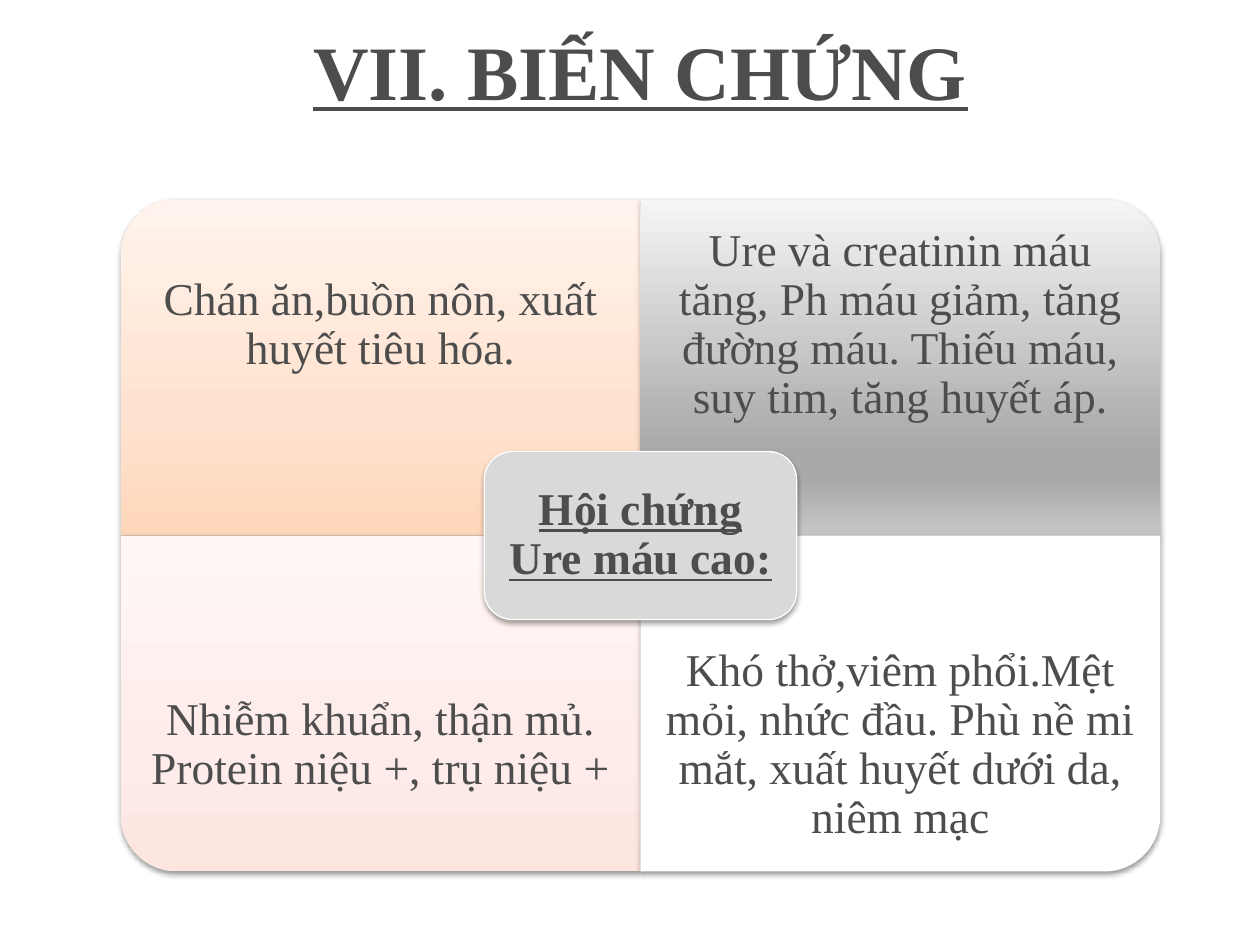
from dataclasses import dataclass

from lxml import etree
from pptx import Presentation
from pptx.dml.color import RGBColor
from pptx.enum.shapes import MSO_SHAPE
from pptx.enum.text import MSO_ANCHOR, PP_ALIGN
from pptx.oxml.ns import qn
from pptx.shapes.autoshape import Shape
from pptx.shapes.shapetree import SlideShapes
from pptx.util import Pt

ONE_ROUND = MSO_SHAPE.ROUND_1_RECTANGLE
ROUNDED = MSO_SHAPE.ROUNDED_RECTANGLE
MIDDLE = MSO_ANCHOR.MIDDLE
CENTER = PP_ALIGN.CENTER

FONT = "Times New Roman"
INK = RGBColor(0x4D, 0x4D, 0x4D)
WHITE = RGBColor(0xFF, 0xFF, 0xFF)
BLACK = RGBColor(0x00, 0x00, 0x00)
HUB_GRAY = RGBColor(0xD9, 0xD9, 0xD9)
PEACH = RGBColor(0xFF, 0xD7, 0xBA)
PEACH_LIGHT = RGBColor(0xFF, 0xE2, 0xCF)
PEACH_PALE = RGBColor(0xFF, 0xF4, 0xED)
SILVER_PALE = RGBColor(0xF5, 0xF5, 0xF5)
SILVER_DARK = RGBColor(0xA9, 0xA9, 0xA9)
SILVER = RGBColor(0xC6, 0xC6, 0xC6)
ROSE = RGBColor(0xFD, 0xE5, 0xE0)
ROSE_LIGHT = RGBColor(0xFD, 0xEC, 0xE9)
ROSE_PALE = RGBColor(0xFF, 0xF7, 0xF5)

CENTER_X, CENTER_Y = 366, 306
TILE_WIDTH, TILE_HEIGHT = 297, 192
TILE_TEXT_HEIGHT = 144
HUB_WIDTH, HUB_HEIGHT = 178.5, 96
HUB_PADDING = 5

Stops = tuple[tuple[int, RGBColor], ...]


@dataclass(frozen=True)
class Tile:
    text: str
    column: int
    row: int
    rotation: int
    stops: Stops
    angle: int = 90


TILES = (
    Tile("Chán ăn,buồn nôn, xuất huyết tiêu hóa.", 0, 0, 270,
         ((0, PEACH), (35, PEACH_LIGHT), (100, PEACH_PALE))),
    Tile("Ure và creatinin máu tăng, Ph máu giảm, tăng đường máu. "
         "Thiếu máu, suy tim, tăng huyết áp.", 1, 0, 0,
         ((0, SILVER_PALE), (74, SILVER_DARK), (83, SILVER_DARK), (100, SILVER)), 270),
    Tile("Nhiễm khuẩn, thận mủ. Protein niệu +, trụ niệu +", 0, 1, 180,
         ((0, ROSE), (35, ROSE_LIGHT), (100, ROSE_PALE))),
    Tile("Khó thở,viêm phổi.Mệt mỏi, nhức đầu. Phù nề mi mắt, "
         "xuất huyết dưới da, niêm mạc", 1, 1, 90, ((0, WHITE),)),
)


def add_color(parent: etree._Element, color: RGBColor) -> etree._Element:
    return etree.SubElement(parent, qn("a:srgbClr"), val=str(color))


def add_shadow(shape: Shape) -> None:
    """Give the shape a soft shadow that falls straight down."""
    effects = etree.SubElement(shape._element.spPr, qn("a:effectLst"))
    shadow = etree.SubElement(
        effects, qn("a:outerShdw"), blurRad=str(Pt(3.1)), dist=str(Pt(1.6)),
        dir="5400000", rotWithShape="0")
    etree.SubElement(add_color(shadow, BLACK), qn("a:alpha"), val="38000")


def fill_gradient(shape: Shape, stops: Stops, angle: int) -> None:
    """Fill with any number of stops, upright whatever the shape's rotation."""
    shape.fill.gradient()
    shape.fill.gradient_angle = angle
    gradient = shape._element.spPr.find(qn("a:gradFill"))
    gradient.set("rotWithShape", "0")
    stop_list = gradient.find(qn("a:gsLst"))
    for old_stop in list(stop_list):
        stop_list.remove(old_stop)
    for position, color in stops:
        stop = etree.SubElement(stop_list, qn("a:gs"), pos=str(position * 1000))
        add_color(stop, color)


def add_text(shapes: SlideShapes, text: str, left: float, top: float,
             width: float, height: float, *, size: float = 26,
             bold: bool = False, underline: bool = False,
             inset: float = 14.2, line_spacing: float = 0.9) -> None:
    box = shapes.add_textbox(Pt(left), Pt(top), Pt(width), Pt(height))
    frame = box.text_frame
    frame.word_wrap = True
    frame.vertical_anchor = MIDDLE
    frame.margin_left = frame.margin_right = Pt(inset)
    frame.margin_top = frame.margin_bottom = Pt(inset)
    para = frame.paragraphs[0]
    para.alignment = CENTER
    para.line_spacing = line_spacing
    span = para.add_run()
    span.text = text
    span.font.name = FONT
    span.font.size = Pt(size)
    span.font.bold = bold
    span.font.underline = underline
    span.font.color.rgb = INK


def add_tile(shapes: SlideShapes, tile: Tile) -> None:
    left = CENTER_X + (tile.column - 1) * TILE_WIDTH
    top = CENTER_Y + (tile.row - 1) * TILE_HEIGHT
    width, height = TILE_WIDTH, TILE_HEIGHT
    if tile.rotation % 180:
        width, height = height, width
    shape = shapes.add_shape(
        ONE_ROUND, Pt(left + (TILE_WIDTH - width) / 2),
        Pt(top + (TILE_HEIGHT - height) / 2), Pt(width), Pt(height))
    shape.rotation = tile.rotation
    if len(tile.stops) > 1:
        fill_gradient(shape, tile.stops, tile.angle)
    else:
        shape.fill.solid()
        shape.fill.fore_color.rgb = tile.stops[0][1]
    shape.line.fill.background()
    add_shadow(shape)
    text_top = top + tile.row * (TILE_HEIGHT - TILE_TEXT_HEIGHT)
    add_text(shapes, tile.text, left, text_top, TILE_WIDTH, TILE_TEXT_HEIGHT)


def add_hub(shapes: SlideShapes, text: str) -> None:
    left, top = CENTER_X - HUB_WIDTH / 2, CENTER_Y - HUB_HEIGHT / 2
    hub = shapes.add_shape(ROUNDED, Pt(left), Pt(top), Pt(HUB_WIDTH), Pt(HUB_HEIGHT))
    hub.fill.solid()
    hub.fill.fore_color.rgb = HUB_GRAY
    hub.line.color.rgb = WHITE
    hub.line.width = Pt(0.75)
    add_shadow(hub)
    add_text(shapes, text, left + HUB_PADDING, top + HUB_PADDING,
             HUB_WIDTH - 2 * HUB_PADDING, HUB_HEIGHT - 2 * HUB_PADDING,
             bold=True, underline=True, inset=8)


def main() -> None:
    deck = Presentation()
    deck.slide_width, deck.slide_height = Pt(720), Pt(540)
    page = deck.slides.add_slide(deck.slide_layouts[6])
    add_text(page.shapes, "VII. BIẾN CHỨNG", 69, 12, 594, 56, size=44,
             bold=True, underline=True, inset=3.6, line_spacing=1.0)
    for tile in TILES:
        add_tile(page.shapes, tile)
    add_hub(page.shapes, "Hội chứng Ure máu cao:")
    deck.save("out.pptx")


if __name__ == "__main__":
    main()
